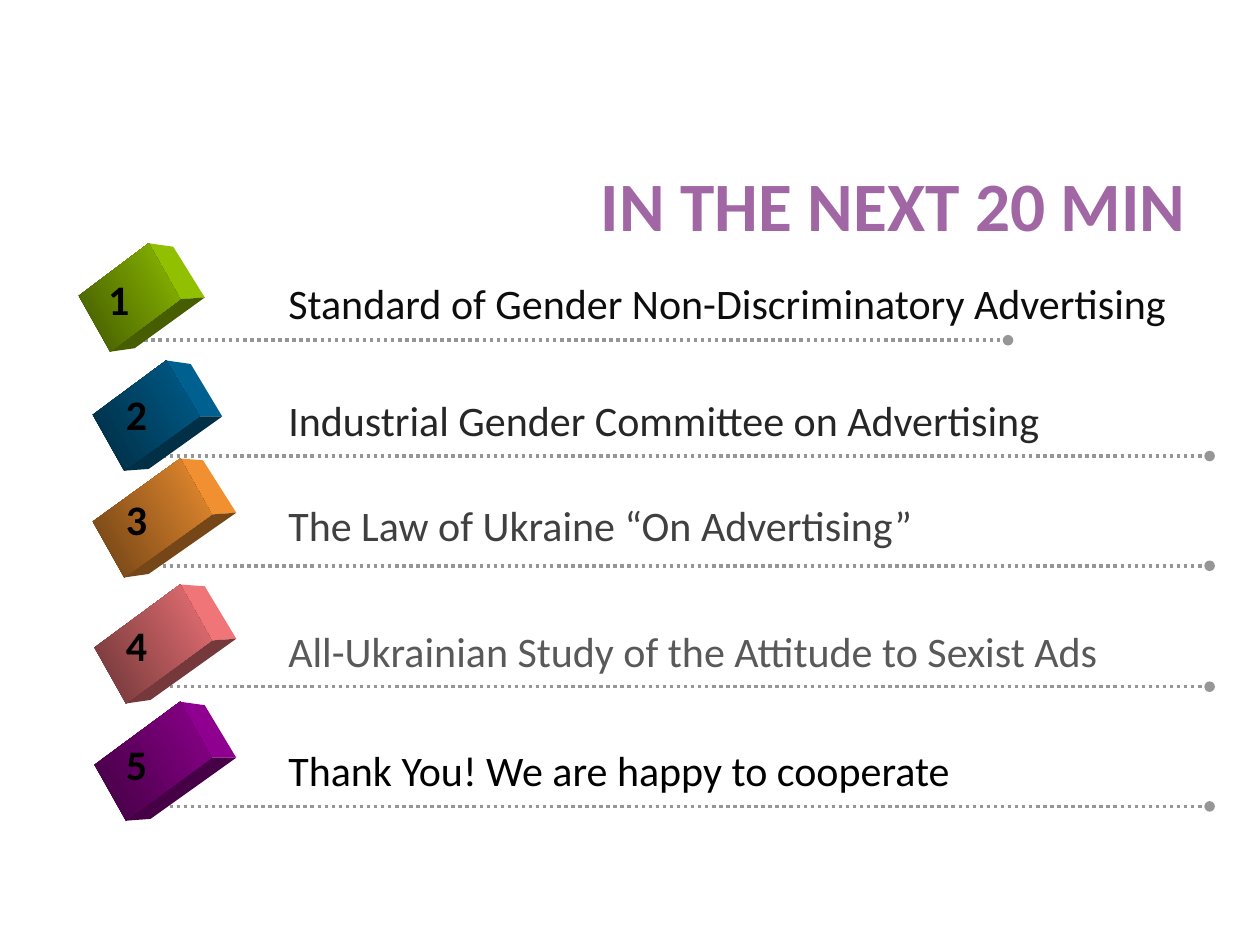
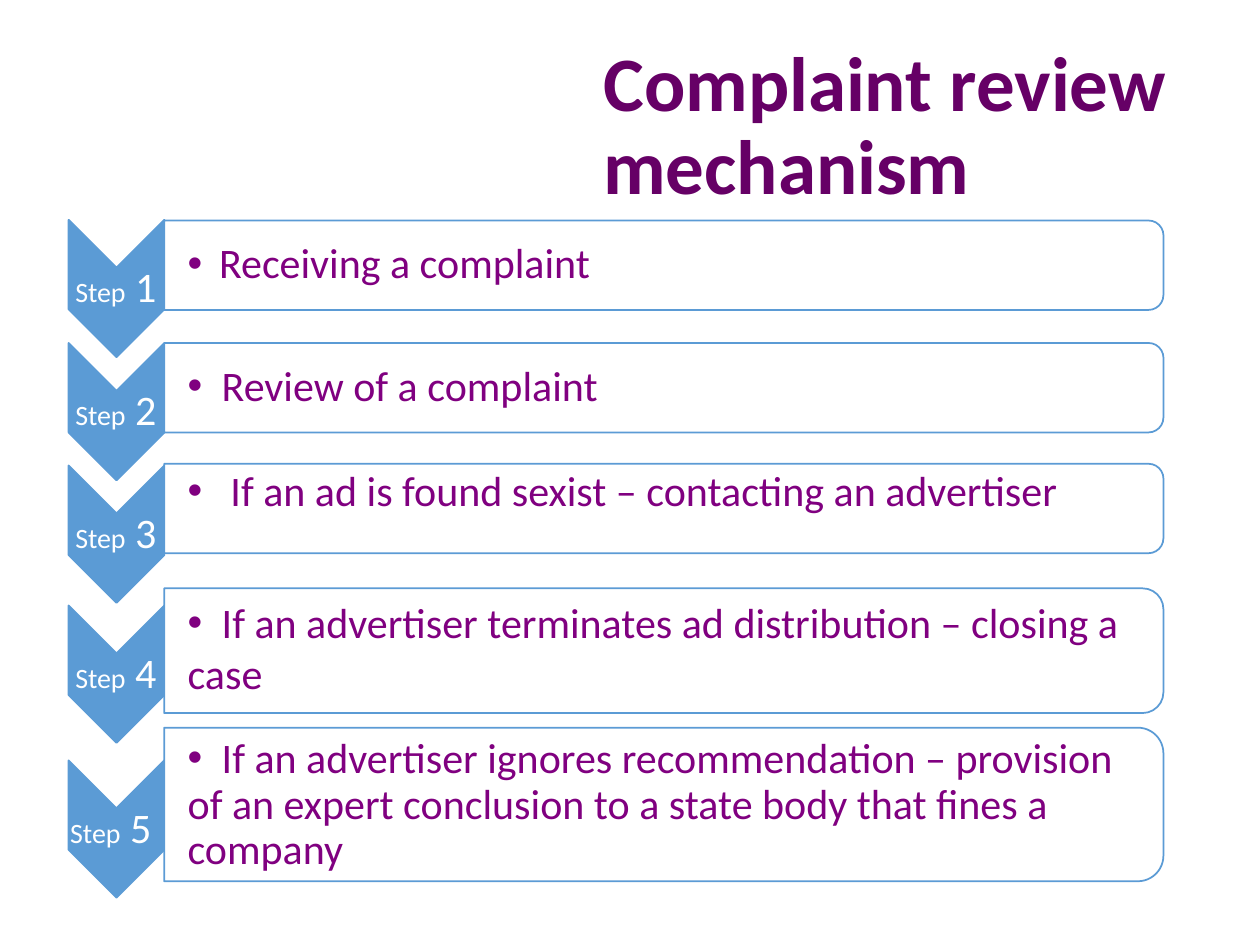
import pptx
import pptx.dml.color
import pptx.enum.dml
import pptx.enum.shapes
import pptx.enum.text
import pptx.oxml
import pptx.oxml.ns
import pptx.util
from collections import namedtuple

Pt = pptx.util.Pt
SHAPES = pptx.enum.shapes.MSO_SHAPE
ANCHOR = pptx.enum.text.MSO_ANCHOR
ALIGN = pptx.enum.text.PP_ALIGN

FONT = "Calibri"
COLOURS = {
    "agenda title": "A167A4", "steps title": "660066", "step text": "800080",
    "step blue": "5B9BD5", "white": "FFFFFF", "black": "000000", "dots": "969696",
}
DEFAULT_INSETS = (7.2, 3.6, 7.2, 3.6)

AgendaRow = namedtuple(
    "AgendaRow",
    "text text_colour text_top number_left number_top line_y line_start line_end "
    "block_colour block_corner block_length")
AGENDA = [
    AgendaRow("Standard of Gender Non-Discriminatory Advertising", "0D0D0D",
              154.8, 54.7, 152.6, 194.4, 78.5, 576, "99CC00", (44.6, 168.6), 50),
    AgendaRow("Industrial Gender Committee on Advertising", "262626",
              221.8, 64.8, 218.2, 260.6, 92.9, 691.2, "006699", (53.1, 237.1), 52),
    AgendaRow("The Law of Ukraine “On Advertising”", "404040",
              282.2, 64.8, 278.6, 323.3, 92.9, 691.2, "FF9933", (53.1, 297.7), 61),
    AgendaRow("All-Ukrainian Study of the Attitude to Sexist Ads", "595959",
              354.2, 64.8, 350.6, 392.4, 92.9, 691.2, "FF7C80", (53.7, 369.7), 61),
    AgendaRow("Thank You! We are happy to cooperate", "000000",
              421.9, 64.8, 418.3, 460.8, 92.9, 691.2, "990099", (53.7, 437.1), 61),
]

Step = namedtuple("Step", "text card_top card_height chevron_top anchor spacing tab label_shift")
STEPS = [
    Step("Receiving a complaint", 126, 51.1, 125.6, ANCHOR.MIDDLE, 0.9, 18, 0),
    Step("Review of a complaint", 196, 51.1, 196, ANCHOR.MIDDLE, 0.9, 19.5, 0),
    Step("If an ad is found sexist – contacting an advertiser",
         265, 51.1, 266, ANCHOR.TOP, 0.9, 24.5, 0),
    Step("If an advertiser terminates ad distribution – closing a case",
         336.2, 71.3, 346, ANCHOR.TOP, 1, 19.5, 0),
    Step("If an advertiser ignores recommendation – provision of an expert "
         "conclusion to a state body that fines a company",
         415.8, 87.8, 434.5, ANCHOR.TOP, 0.9, 19.5, -2.9),
]


def rgb(colour):
    return pptx.dml.color.RGBColor.from_string(colour)


def shade(colour, factor):
    """Darken a hex colour by a factor between 0 and 1."""
    return "".join(f"{round(int(colour[i:i + 2], 16) * factor):02X}" for i in (0, 2, 4))


def add_xml(parent, tag, content="", **attributes):
    words = "".join(f' {name}="{value}"' for name, value in attributes.items())
    namespace = pptx.oxml.ns.nsdecls("a")
    parent.append(pptx.oxml.parse_xml(f"<a:{tag} {namespace}{words}>{content}</a:{tag}>"))


def add_box(slide, left, top, width, height, insets=DEFAULT_INSETS,
            anchor=ANCHOR.TOP, wrap=True):
    """Add an empty text box and return its first paragraph."""
    frame = slide.shapes.add_textbox(Pt(left), Pt(top), Pt(width), Pt(height)).text_frame
    frame.word_wrap = wrap
    frame.vertical_anchor = anchor
    frame.margin_left, frame.margin_top, frame.margin_right, frame.margin_bottom = map(Pt, insets)
    return frame.paragraphs[0]


def add_run(para, text, size, colour, bold=False):
    span = para.add_run()
    span.text = text
    span.font.name = FONT
    span.font.size = Pt(size)
    span.font.bold = bold
    span.font.color.rgb = rgb(colour)


def add_title(slide, text, frame, size, colour):
    para = add_box(slide, *frame, anchor=ANCHOR.MIDDLE)
    para.line_spacing = 0.9
    add_run(para, text, size, colour, bold=True)


def add_dotted_line(slide, start, end, y):
    line = slide.shapes.add_connector(
        pptx.enum.shapes.MSO_CONNECTOR.STRAIGHT, Pt(start), Pt(y), Pt(end), Pt(y))
    line.line.color.rgb = rgb(COLOURS["dots"])
    line.line.width = Pt(2)
    line.line.dash_style = pptx.enum.dml.MSO_LINE.ROUND_DOT
    add_xml(line.line._get_or_add_ln(), "tailEnd", type="oval")
    add_xml(line._element.spPr, "effectLst")


def add_face(slide, points):
    builder = slide.shapes.build_freeform(*points[0], scale=pptx.util.Length(12700))
    builder.add_line_segments(points[1:], close=True)
    face = builder.convert_to_shape()
    face.shadow.inherit = False
    face.line.fill.background()
    return face


def add_block(slide, corner, length, colour):
    """Draw a tilted solid block; corner is the leftmost point of its front."""
    left, top = corner
    upper = (left + 0.81 * length, top - 0.59 * length)
    lower = (left + 18.3, top + 32)
    right = (upper[0] + 18.3, upper[1] + 32)
    back_upper, back_right, back_lower = (
        (x + 13.7, y + shift)
        for (x, y), shift in zip((upper, right, lower), (1.7, -0.6, -1.2)))

    side = add_face(slide, [upper, back_upper, back_right, right])
    side.fill.solid()
    side.fill.fore_color.rgb = rgb(shade(colour, 0.94))
    base = add_face(slide, [lower, right, back_right, back_lower])
    base.fill.solid()
    base.fill.fore_color.rgb = rgb(shade(colour, 0.46))
    front = add_face(slide, [corner, upper, right, lower])
    front.fill.gradient()
    front.fill.gradient_angle = 30
    for stop, position, factor in zip(front.fill.gradient_stops, (0, 1), (0.42, 0.92)):
        stop.position = position
        stop.color.rgb = rgb(shade(colour, factor))


def add_agenda_row(slide, number, row):
    add_dotted_line(slide, row.line_start, row.line_end, row.line_y)
    add_block(slide, row.block_corner, row.block_length, row.block_colour)
    para = add_box(slide, 157.7, row.text_top, 545, 36.5)
    add_run(para, row.text, 24, row.text_colour)
    para = add_box(slide, row.number_left, row.number_top, 26.6, 36.5, wrap=False)
    add_run(para, str(number), 24, COLOURS["black"], bold=True)


def add_quarter_turned(slide, kind, left, top, width, height, fill):
    """Add a shape turned by 90 degrees that covers the given frame once turned."""
    shift = (width - height) / 2
    shape = slide.shapes.add_shape(
        kind, Pt(left + shift), Pt(top - shift), Pt(height), Pt(width))
    shape.rotation = 90
    shape.shadow.inherit = False
    shape.fill.solid()
    shape.fill.fore_color.rgb = rgb(fill)
    shape.line.color.rgb = rgb(COLOURS["step blue"])
    shape.line.width = Pt(1)


def add_bullet(para, tab):
    """Put a bullet at the margin; the first line goes on at the tab stop."""
    properties = para._p.get_or_add_pPr()
    properties.set("marL", "0")
    properties.set("indent", "0")
    add_xml(properties, "buFont", typeface="Arial")
    add_xml(properties, "buChar", char="•")
    add_xml(properties, "tabLst", f'<a:tab pos="{Pt(tab)}" algn="l"/>')


def add_step(slide, number, step):
    add_quarter_turned(slide, SHAPES.CHEVRON, 39.2, step.chevron_top, 54.7, 78.5,
                       COLOURS["step blue"])
    label = add_box(slide, 38.9 + step.label_shift, step.chevron_top + 27.7, 54.7, 23.8,
                    insets=(0.7,) * 4, anchor=ANCHOR.MIDDLE)
    label.alignment = ALIGN.CENTER
    label.line_spacing = 0.9
    add_run(label, "Step", 16, COLOURS["white"])
    add_run(label, f" {number}", 24, COLOURS["white"])

    add_quarter_turned(slide, SHAPES.ROUND_2_SAME_RECTANGLE, 93.8, step.card_top, 571,
                       step.card_height, COLOURS["white"])
    para = add_box(slide, 93.8, step.card_top + 0.05 * step.card_height, 567,
                   0.9 * step.card_height, insets=(13.4, 1.2, 1.2, 1.2), anchor=step.anchor)
    add_bullet(para, step.tab)
    para.line_spacing = step.spacing
    add_run(para, "\t" + step.text, 24, COLOURS["step text"])


def main():
    deck = pptx.Presentation()
    deck.slide_width, deck.slide_height = Pt(720), Pt(540)
    blank = deck.slide_layouts[6]

    agenda = deck.slides.add_slide(blank)
    add_title(agenda, "IN THE NEXT 20 MIN", (336.2, 86.4, 360, 66.2), 39.6,
              COLOURS["agenda title"])
    for number, row in enumerate(AGENDA, 1):
        add_agenda_row(agenda, number, row)

    review = deck.slides.add_slide(blank)
    add_title(review, "Complaint review mechanism", (337.7, 20.9, 370, 104.4), 44,
              COLOURS["steps title"])
    for number, step in enumerate(STEPS, 1):
        add_step(review, number, step)

    deck.save("out.pptx")


if __name__ == "__main__":
    main()
